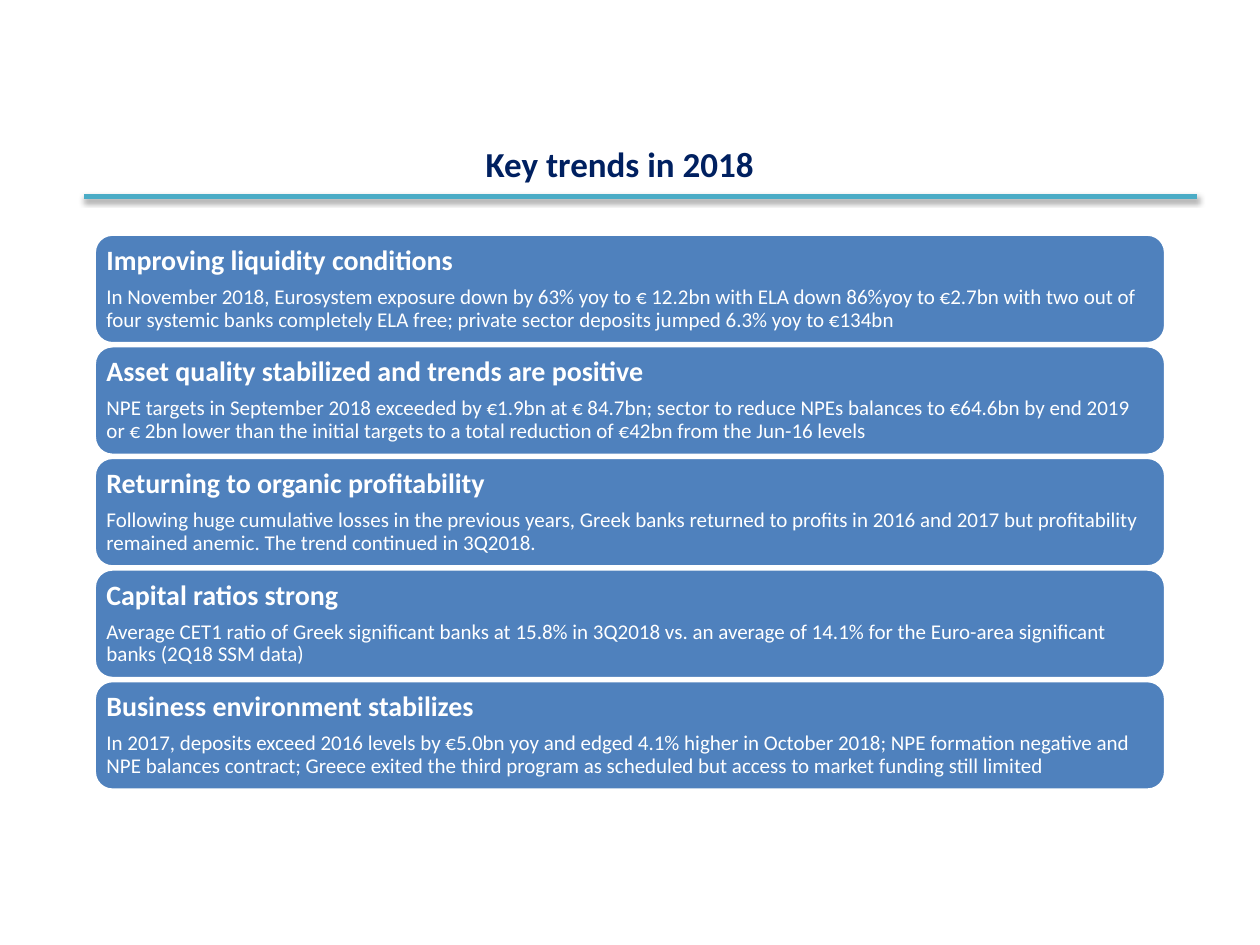
"""Build a slide of the key banking trends in 2018."""
import pptx
import pptx.dml.color
import pptx.enum.shapes
import pptx.enum.text
import pptx.oxml
import pptx.oxml.ns
import pptx.util
from pptx.util import Cm

TITLE = "Key trends in 2018"
TRENDS = [
    ("Improving liquidity conditions",
     "In November 2018, Eurosystem exposure down by 63% yoy to € 12.2bn with ELA down 86%yoy to €2.7bn "
     "with two out of four systemic banks completely ELA free; private sector deposits jumped 6.3% yoy to €134bn"),
    ("Asset quality stabilized and trends are positive",
     "NPE targets in September 2018 exceeded by €1.9bn at € 84.7bn; sector to reduce NPEs balances to €64.6bn "
     "by end 2019 or € 2bn lower than the initial targets to a total reduction of €42bn from the Jun-16 levels"),
    ("Returning to organic profitability",
     "Following huge cumulative losses in the previous years, Greek banks returned to profits in 2016 and 2017 "
     "but profitability remained anemic. The trend continued in 3Q2018."),
    ("Capital ratios strong",
     "Average CET1 ratio of Greek significant banks at 15.8% in 3Q2018 vs. an average of 14.1% "
     "for the Euro-area significant banks (2Q18 SSM data)"),
    ("Business environment stabilizes",
     "In 2017, deposits exceed 2016 levels by €5.0bn yoy and edged 4.1% higher in October 2018; "
     "NPE formation negative and NPE balances contract; Greece exited the third program as scheduled "
     "but access to market funding still limited"),
]
THEME = {
    "font": "Calibri",
    "title": "002060", "rule": "4BACC6", "panel": "4F81BD", "white": "FFFFFF",
    "title_size": 20, "heading_size": 16, "body_size": 12,
}
PANEL_LEFT, PANEL_TOP, PANEL_WIDTH, PANEL_HEIGHT = 1.9, 4.72, 21.6, 2.21
PANEL_PITCH = 2.25
PANEL_INSET = 0.28


def color(name):
    return pptx.dml.color.RGBColor.from_string(THEME[name])


def style_font(paragraph, size, color_name, bold):
    font = paragraph.font
    font.name = THEME["font"]
    font.size = pptx.util.Pt(THEME[size])
    font.bold = bold
    font.color.rgb = color(color_name)


def add_title(slide):
    title = slide.shapes.title
    title.left, title.top, title.width, title.height = Cm(1.7), Cm(2.49), Cm(21.59), Cm(1.63)
    title.text_frame.text = TITLE
    title.text_frame.vertical_anchor = pptx.enum.text.MSO_ANCHOR.MIDDLE
    paragraph = title.text_frame.paragraphs[0]
    paragraph.alignment = pptx.enum.text.PP_ALIGN.CENTER
    style_font(paragraph, "title_size", "title", True)


def add_panel(slide, top, heading, body):
    panel = slide.shapes.add_shape(
        pptx.enum.shapes.MSO_SHAPE.ROUNDED_RECTANGLE,
        Cm(PANEL_LEFT), Cm(top), Cm(PANEL_WIDTH), Cm(PANEL_HEIGHT))
    panel.shadow.inherit = False
    panel.fill.solid()
    panel.fill.fore_color.rgb = color("panel")
    panel.line.color.rgb = color("white")
    panel.line.width = pptx.util.Pt(2)
    frame = panel.text_frame
    frame.word_wrap = True
    frame.vertical_anchor = pptx.enum.text.MSO_ANCHOR.MIDDLE
    frame.margin_left = frame.margin_right = Cm(PANEL_INSET / 2)
    frame.margin_top = frame.margin_bottom = Cm(0)
    frame.text = heading
    frame.add_paragraph().text = body
    for paragraph, size in zip(frame.paragraphs, ("heading_size", "body_size")):
        paragraph.alignment = pptx.enum.text.PP_ALIGN.LEFT
        paragraph.line_spacing = 0.9
        style_font(paragraph, size, "white", size == "heading_size")
    frame.paragraphs[0].space_after = pptx.util.Pt(5.6)


def add_rule(slide):
    rule = slide.shapes.add_connector(
        pptx.enum.shapes.MSO_CONNECTOR.STRAIGHT, Cm(1.7), Cm(3.96), Cm(24.13), Cm(3.96))
    rule.line.color.rgb = color("rule")
    rule.line.width = pptx.util.Pt(3)
    rule._element.spPr.append(pptx.oxml.parse_xml(
        f'<a:effectLst {pptx.oxml.ns.nsdecls("a")}>'
        '<a:outerShdw blurRad="40000" dist="23000" dir="5400000" rotWithShape="0">'
        '<a:srgbClr val="000000"><a:alpha val="35000"/></a:srgbClr>'
        '</a:outerShdw></a:effectLst>'))


def main():
    presentation = pptx.Presentation()
    presentation.slide_width, presentation.slide_height = Cm(25.4), Cm(19.05)
    slide = presentation.slides.add_slide(presentation.slide_layouts[5])
    add_title(slide)
    for index, (heading, body) in enumerate(TRENDS):
        add_panel(slide, PANEL_TOP + index * PANEL_PITCH, heading, body)
    add_rule(slide)
    presentation.save("out.pptx")


if __name__ == "__main__":
    main()
